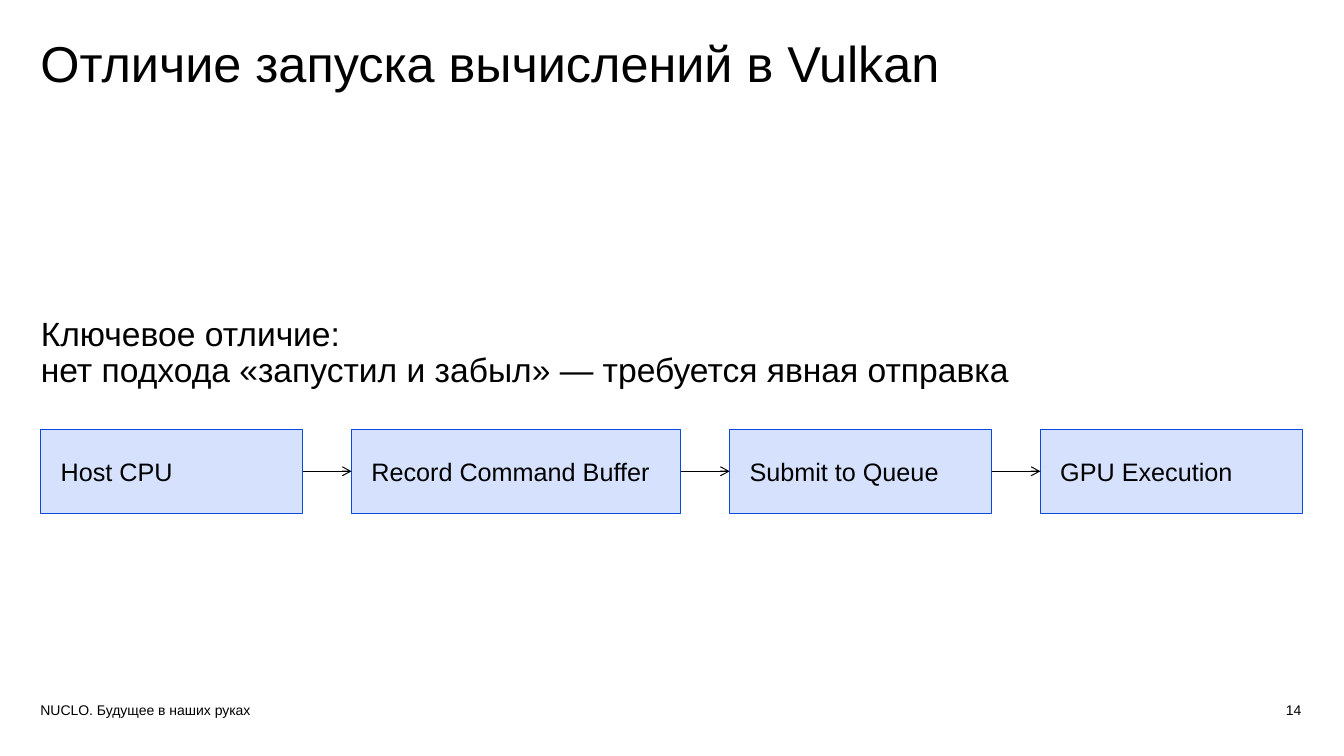
from dataclasses import dataclass
from typing import Any

from lxml import etree
from pptx import Presentation
from pptx import util as u
from pptx.dml.color import RGBColor
from pptx.enum import shapes, text
from pptx.oxml.ns import qn


@dataclass(frozen=True)
class Theme:
    font: str = "Arial"
    ink: RGBColor = RGBColor(0x00, 0x00, 0x00)
    box_fill: RGBColor = RGBColor(0xD5, 0xE1, 0xFD)
    box_line: RGBColor = RGBColor(0x0B, 0x4A, 0xDE)
    title: int = 36
    body: int = 24
    box: int = 18
    footer: int = 10
    line: float = 0.75


@dataclass(frozen=True)
class Step:
    label: str
    width: float = 6.6


@dataclass(frozen=True)
class Label:
    words: str
    left: float
    top: float
    width: float
    height: float
    size: int
    margins: tuple[float, float, float, float]
    align: text.PP_ALIGN = text.PP_ALIGN.LEFT
    spacing: float = 1.0


THEME = Theme()
LEFT, STEP_TOP, STEP_HEIGHT, GAP = 1.03, 10.82, 2.11, 1.23

TITLE = Label("Отличие запуска вычислений в Vulkan", 1.02, 0.86, 27.7, 2.1,
              THEME.title, (0, 0.13, 0.25, 0.13), spacing=0.9)
LABELS = [
    Label("Ключевое отличие:\vнет подхода «запустил и забыл» — требуется явная отправка",
          LEFT, 8, 31.8, 2.2, THEME.body, (0, 0, 0, 0), spacing=0.9),
    Label("NUCLO. Будущее в наших руках", 0.77, 17.55, 7, 0.69,
          THEME.footer, (0.25, 0.13, 0.25, 0.13)),
    Label("14", 24.4, 17.55, 8.4, 1.02, THEME.footer,
          (0.25, 0.13, 0, 0.13), text.PP_ALIGN.RIGHT),
]
STEPS = [
    Step("Host CPU"),
    Step("Record Command Buffer", 8.3),
    Step("Submit to Queue"),
    Step("GPU Execution"),
]


def apply(target: Any, values: dict[str, Any]) -> None:
    for name, value in values.items():
        setattr(target, name, value)


def write(sp: Any, words: str, size: int, margins: tuple[float, float, float, float],
          anchor: text.MSO_ANCHOR, align: text.PP_ALIGN, spacing: float = 1.0) -> None:
    tf = sp.text_frame
    sides = ("margin_left", "margin_top", "margin_right", "margin_bottom")
    apply(tf, {
        "text": words,
        "word_wrap": True,
        "auto_size": text.MSO_AUTO_SIZE.NONE,
        "vertical_anchor": anchor,
        **{side: u.Cm(value) for side, value in zip(sides, margins)},
    })
    p = tf.paragraphs[0]
    apply(p, {"alignment": align, "line_spacing": spacing, "space_before": u.Pt(0)})
    for r in p.runs:
        apply(r.font, {"name": THEME.font, "size": u.Pt(size)})
        r.font.color.rgb = THEME.ink


def write_label(sp: Any, label: Label) -> None:
    write(sp, label.words, label.size, label.margins,
          text.MSO_ANCHOR.TOP, label.align, label.spacing)


def draw_label(s: Any, label: Label) -> None:
    box = (label.left, label.top, label.width, label.height)
    write_label(s.shapes.add_textbox(*map(u.Cm, box)), label)


def draw_step(s: Any, step: Step, left: float) -> Any:
    box = (left, STEP_TOP, step.width, STEP_HEIGHT)
    sp = s.shapes.add_shape(shapes.MSO_SHAPE.RECTANGLE, *map(u.Cm, box))
    sp.shadow.inherit = False
    sp.fill.solid()
    sp.fill.fore_color.rgb = THEME.box_fill
    sp.line.color.rgb = THEME.box_line
    sp.line.width = u.Pt(THEME.line)
    write(sp, step.label, THEME.box, (0.5, 0.4, 0.5, 0.4),
          text.MSO_ANCHOR.MIDDLE, text.PP_ALIGN.LEFT)
    return sp


def draw_arrow(s: Any, start: Any, end: Any) -> None:
    cx = s.shapes.add_connector(shapes.MSO_CONNECTOR.STRAIGHT, 0, 0, 0, 0)
    cx.begin_connect(start, 3)
    cx.end_connect(end, 1)
    cx.line.color.rgb = THEME.ink
    cx.line.width = u.Pt(THEME.line)
    etree.SubElement(cx.line._get_or_add_ln(), qn("a:tailEnd"), type="arrow")
    etree.SubElement(cx._element.spPr, qn("a:effectLst"))


def main() -> None:
    prs = Presentation()
    apply(prs, {"slide_width": u.Cm(33.87), "slide_height": u.Cm(19.05)})
    s = prs.slides.add_slide(prs.slide_layouts[5])

    title = s.shapes.title
    apply(title, {
        "left": u.Cm(TITLE.left), "top": u.Cm(TITLE.top),
        "width": u.Cm(TITLE.width), "height": u.Cm(TITLE.height),
    })
    write_label(title, TITLE)
    for label in LABELS:
        draw_label(s, label)

    left = LEFT
    boxes = []
    for step in STEPS:
        boxes.append(draw_step(s, step, left))
        left += step.width + GAP
    for start, end in zip(boxes, boxes[1:]):
        draw_arrow(s, start, end)

    prs.save("out.pptx")


if __name__ == "__main__":
    main()
